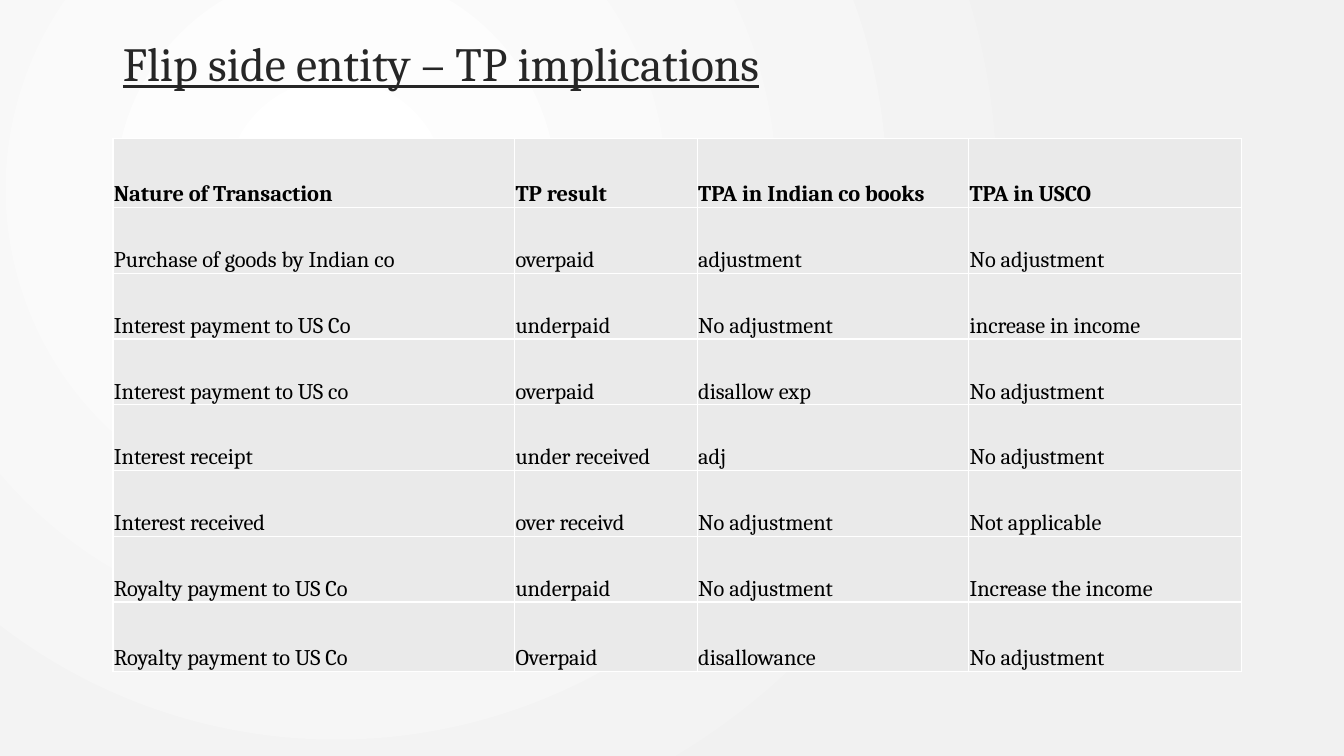
from dataclasses import dataclass

from lxml.etree import SubElement as Sub
from pptx import Presentation
from pptx.dml.color import RGBColor
from pptx.enum.text import MSO_VERTICAL_ANCHOR as Anchor
from pptx.oxml.ns import qn
from pptx.slide import Slide
from pptx.table import _Cell as Cell
from pptx.text.text import TextFrame
from pptx.util import Inches, Pt

WIDE, HIGH = Inches(13.33), Inches(7.5)
WHITE = RGBColor(0xFF, 0xFF, 0xFF)
PALE = RGBColor(0xF1, 0xF1, 0xF1)
GREY = RGBColor(0xEA, 0xEA, 0xEA)
DARK = RGBColor(0x26, 0x26, 0x26)
BLACK = RGBColor(0, 0, 0)
FONT = "Cambria"

COLS = (3.98, 1.81, 2.69, 2.7)  # relative widths
EDGE = 0.13  # share of the table's height in its first and last rows
ROWS = (
    ("Nature of Transaction", "TP result", "TPA in Indian co books", "TPA in USCO"),
    ("Purchase of goods by Indian co", "overpaid", "adjustment", "No adjustment"),
    ("Interest payment to US Co", "underpaid", "No adjustment", "increase in income"),
    ("Interest payment to US co", "overpaid", "disallow exp", "No adjustment"),
    ("Interest receipt", "under received", "adj", "No adjustment"),
    ("Interest received", "over receivd", "No adjustment", "Not applicable"),
    ("Royalty payment to US Co", "underpaid", "No adjustment", "Increase the income"),
    ("Royalty payment to US Co", "Overpaid", "disallowance", "No adjustment"),
)


@dataclass(frozen=True)
class Box:
    """A frame in shares of the slide's width and height."""
    x: float
    y: float
    w: float
    h: float

    def place(self) -> tuple[int, int, int, int]:
        return (int(self.x * WIDE), int(self.y * HIGH),
                int(self.w * WIDE), int(self.h * HIGH))


@dataclass(frozen=True)
class Style:
    size: float
    tint: RGBColor
    bold: bool = False
    line: bool = False


TITLE = Box(1.12 / 13.33, 0.29 / 7.5, 9.75 / 13.33, 1.4 / 7.5)
GRID = Box(1.12 / 13.33, 1.37 / 7.5, 11.19 / 13.33, 5.29 / 7.5)
HEAD = Style(34, DARK, line=True)
TOP = Style(16, BLACK, bold=True)
BODY = Style(16, BLACK)


def write(frame: TextFrame, text: str, style: Style) -> None:
    run = frame.paragraphs[0].add_run()
    run.text = text
    font = run.font
    font.name, font.size = FONT, Pt(style.size)
    font.bold, font.underline = style.bold, style.line
    font.color.rgb = style.tint


def paint(slide: Slide) -> None:
    """Give the slide a circular gradient."""
    fill = slide.background.fill
    fill.gradient()
    for stop, tint in zip(fill.gradient_stops, (WHITE, PALE)):
        stop.color.rgb = tint
    grad = slide.element.find(".//" + qn("a:gradFill"))
    grad.remove(grad.find(qn("a:lin")))
    ring = Sub(grad, qn("a:path"), path="circle")
    Sub(ring, qn("a:fillToRect"), l="50000", t="50000", r="100000", b="100000")


def frame(cell: Cell) -> None:
    """Draw the white borders, which must precede the fill."""
    props = cell._tc.get_or_add_tcPr()
    for side in ("lnL", "lnR", "lnT", "lnB"):
        line = Sub(props, qn(f"a:{side}"), w=str(Pt(1)))
        Sub(Sub(line, qn("a:solidFill")), qn("a:srgbClr"), val=str(WHITE))


def dress(cell: Cell, text: str, style: Style) -> None:
    frame(cell)
    cell.fill.solid()
    cell.fill.fore_color.rgb = GREY
    cell.vertical_anchor = Anchor.BOTTOM
    cell.margin_left = cell.margin_right = cell.margin_top = Inches(0.01)
    cell.margin_bottom = 0
    write(cell.text_frame, text, style)


def tabulate(slide: Slide) -> None:
    place = GRID.place()
    table = slide.shapes.add_table(len(ROWS), len(COLS), *place).table
    table.horz_banding = False
    for col, part in zip(table.columns, COLS):
        col.width = int(place[2] * part / sum(COLS))
    inner = (1 - 2 * EDGE) / (len(ROWS) - 2)
    for i, (row, texts) in enumerate(zip(table.rows, ROWS)):
        part = EDGE if i in (0, len(ROWS) - 1) else inner
        row.height = int(place[3] * part)
        for cell, text in zip(row.cells, texts):
            dress(cell, text, BODY if i else TOP)


def main() -> None:
    deck = Presentation()
    deck.slide_width, deck.slide_height = WIDE, HIGH
    slide = deck.slides.add_slide(deck.slide_layouts[6])
    paint(slide)
    title = slide.shapes.add_textbox(*TITLE.place()).text_frame
    title.word_wrap = True
    write(title, "Flip side entity – TP implications", HEAD)
    tabulate(slide)
    deck.save("out.pptx")


if __name__ == "__main__":
    main()
